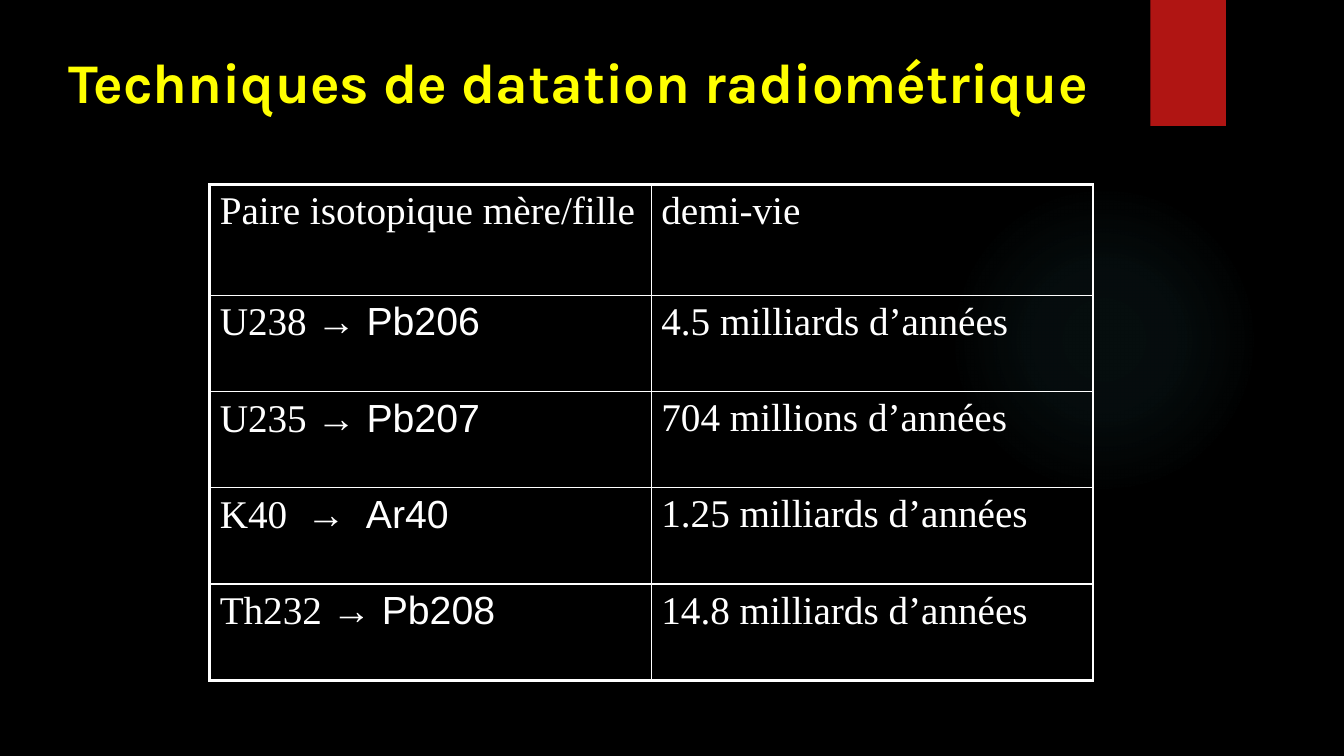
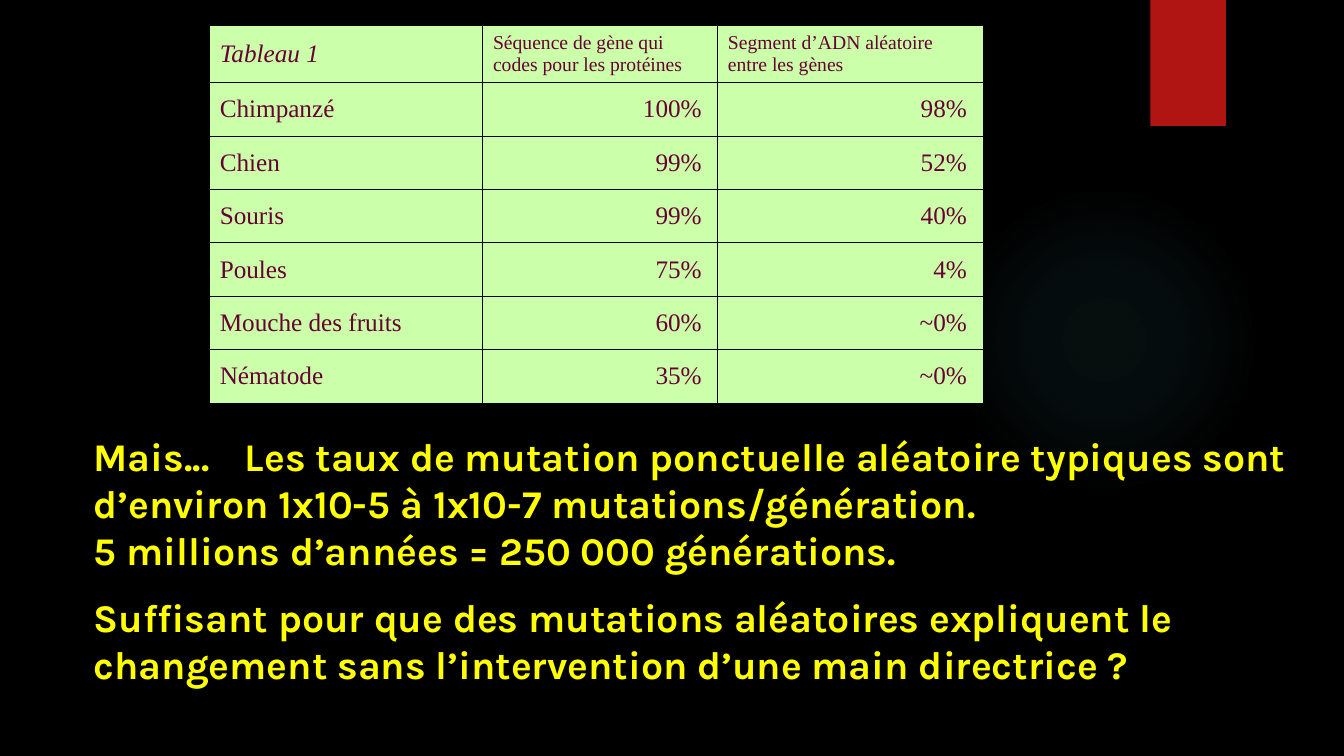
import pptx
import pptx.dml.color
import pptx.enum.shapes
import pptx.enum.text
import pptx.oxml
import pptx.oxml.ns
import pptx.oxml.xmlchemy
import pptx.util

Inches = pptx.util.Inches
Pt = pptx.util.Pt
RGBColor = pptx.dml.color.RGBColor
MSO_SHAPE = pptx.enum.shapes.MSO_SHAPE
MSO_ANCHOR = pptx.enum.text.MSO_ANCHOR
PP_ALIGN = pptx.enum.text.PP_ALIGN
qn = pptx.oxml.ns.qn

BLACK = RGBColor(0x00, 0x00, 0x00)
WHITE = RGBColor(0xFF, 0xFF, 0xFF)
YELLOW = RGBColor(0xFF, 0xFF, 0x00)
RED = RGBColor(0xB0, 0x15, 0x13)
TEAL = RGBColor(0x50, 0xB9, 0xC1)
MINT = RGBColor(0xCC, 0xFF, 0xAA)
PLUM = RGBColor(0x66, 0x00, 0x33)
GLOW_STOPS = [(0, 7), (36, 6), (69, 0)]
HEADING_FONT = "Karla"
TABLE_FONT = "Times New Roman"
DECAY_FONT = "Arial"

DATING_TITLE = "Techniques de datation radiométrique"
DATING_HEADER = ("Paire isotopique mère/fille", "demi-vie")
HALF_LIVES = [
    ("U238 ", "→ Pb206", "4.5 milliards d’années"),
    ("U235 ", "→ Pb207", "704 millions d’années"),
    ("K40\t", "→\tAr40", "1.25 milliards d’années"),
    ("Th232 ", "→ Pb208", "14.8 milliards d’années"),
]
DECAY_TABS = (0.86, 1.45)

GENE_HEADER = (
    "Tableau 1",
    "Séquence de gène qui\vcodes pour les protéines",
    "Segment d’ADN aléatoire\ventre les gènes",
)
GENE_MATCHES = [
    ("Chimpanzé", "100%", "98%"),
    ("Chien", "99%", "52%"),
    ("Souris", "99%", "40%"),
    ("Poules", "75%", "4%"),
    ("Mouche des fruits", "60%", "~0%"),
    ("Nématode", "35%", "~0%"),
]
MUTATION_RATES = [
    "Mais...\tLes taux de mutation ponctuelle aléatoire typiques sont "
    "d’environ 1x10-5 à 1x10-7 mutations/génération.\v"
    "5 millions d’années = 250 000 générations.",
    "Suffisant pour que des mutations aléatoires expliquent le changement "
    "sans l’intervention d’une main directrice ?",
]
RATES_TAB = 1.46


def style(paragraph, font_name, size, color, bold=False, italic=False):
    font = paragraph.font
    font.name, font.size = font_name, Pt(size)
    font.color.rgb = color
    font.bold, font.italic = bold, italic


def add_tabs(paragraph, positions):
    properties = paragraph._p.get_or_add_pPr()
    tabs = pptx.oxml.xmlchemy.OxmlElement("a:tabLst")
    for position in positions:
        tab = pptx.oxml.xmlchemy.OxmlElement("a:tab")
        tab.set("pos", str(Inches(position)))
        tab.set("algn", "l")
        tabs.append(tab)
    properties.append(tabs)


def place(shape, left, top, width, height):
    shape.left, shape.top = Inches(left), Inches(top)
    shape.width, shape.height = Inches(width), Inches(height)
    frame = shape.text_frame
    frame.word_wrap = True
    frame.auto_size = pptx.enum.text.MSO_AUTO_SIZE.NONE
    frame.vertical_anchor = MSO_ANCHOR.TOP
    return frame


def set_borders(cell, widths, color):
    properties = cell._tc.get_or_add_tcPr()
    for order, (side, width) in enumerate(zip("LRTB", widths)):
        properties.insert(order, pptx.oxml.parse_xml(
            f'<a:ln{side} {pptx.oxml.ns.nsdecls("a")} w="{Pt(width)}">'
            f'<a:solidFill><a:srgbClr val="{color}"/></a:solidFill></a:ln{side}>'))


def add_grid(slide, top, widths, heights, border, outer, inner, fill=None):
    table = slide.shapes.add_table(
        len(heights), len(widths), Inches(2.08), Inches(top),
        Inches(sum(widths)), Inches(sum(heights))).table
    table.first_row = table.horz_banding = False
    for column, width in zip(table.columns, widths):
        column.width = Inches(width)
    last_row, last_column = len(heights) - 1, len(widths) - 1
    for r, height in enumerate(heights):
        table.rows[r].height = Inches(height)
        for c in range(len(widths)):
            cell = table.cell(r, c)
            if fill is None:
                cell.fill.background()
            else:
                cell.fill.solid()
                cell.fill.fore_color.rgb = fill
            edges = (c == 0, c == last_column, r == 0, r == last_row)
            set_borders(cell, [outer if edge else inner for edge in edges], border)
    return table


def add_decor(slide, master):
    master.background.fill.solid()
    master.background.fill.fore_color.rgb = BLACK
    glow = slide.shapes.add_shape(
        MSO_SHAPE.OVAL, Inches(9.41), Inches(1.83), Inches(3.08), Inches(3.08))
    ribbon = slide.shapes.add_shape(
        MSO_SHAPE.RECTANGLE, Inches(11.41), 0, Inches(0.75), Inches(1.25))
    ribbon.fill.solid()
    ribbon.fill.fore_color.rgb = RED
    glow.fill.background()
    stops = "".join(
        f'<a:gs pos="{position * 1000}"><a:srgbClr val="{TEAL}">'
        f'<a:alpha val="{alpha * 1000}"/></a:srgbClr></a:gs>'
        for position, alpha in GLOW_STOPS)
    properties = glow.element.spPr
    properties.replace(properties.find(qn("a:noFill")), pptx.oxml.parse_xml(
        f'<a:gradFill {pptx.oxml.ns.nsdecls("a")}><a:gsLst>{stops}</a:gsLst>'
        '<a:path path="circle"><a:fillToRect l="50000" t="50000" r="50000" b="50000"/>'
        '</a:path></a:gradFill>'))
    for order, shape in enumerate((glow, ribbon)):
        shape.line.fill.background()
        shape.shadow.inherit = False
        master.shapes.element.insert(2 + order, shape.element)


def build_dating(slide):
    frame = place(slide.shapes.title, 0.58, 0.42, 11.08, 0.77)
    frame.text = DATING_TITLE
    frame.paragraphs[0].alignment = PP_ALIGN.LEFT
    style(frame.paragraphs[0], HEADING_FONT, 40, YELLOW, bold=True)

    row_height = (4.92 - 1.1) / len(HALF_LIVES)
    table = add_grid(slide, 1.83, [4.38] * 2, [1.1] + [row_height] * len(HALF_LIVES),
                     WHITE, 2.25, 1)
    for c, heading in enumerate(DATING_HEADER):
        table.cell(0, c).text = heading
    for r, (parent, daughter, half_life) in enumerate(HALF_LIVES, 1):
        pair = table.cell(r, 0).text_frame.paragraphs[0]
        if "\t" in parent:
            add_tabs(pair, DECAY_TABS)
        pair.add_run().text = parent
        decay = pair.add_run()
        decay.text = daughter
        decay.font.name = DECAY_FONT
        table.cell(r, 1).text = half_life
    for cell in table.iter_cells():
        style(cell.text_frame.paragraphs[0], TABLE_FONT, 28, WHITE)


def build_genes(slide):
    title = slide.shapes.title.element
    title.getparent().remove(title)
    table = add_grid(slide, 0.25, [2.71, 2.33, 2.63],
                     [0.57] + [0.53] * len(GENE_MATCHES), BLACK, 0.75, 0.75, MINT)
    for r, row in enumerate([GENE_HEADER] + GENE_MATCHES):
        for c, value in enumerate(row):
            cell = table.cell(r, c)
            cell.text = value
            cell.vertical_anchor = MSO_ANCHOR.MIDDLE
            paragraph = cell.text_frame.paragraphs[0]
            if r and c:
                paragraph.alignment = PP_ALIGN.RIGHT
                cell.margin_right = Inches(0.16)
            style(paragraph, TABLE_FONT, 14 if r == 0 and c else 18, PLUM,
                  italic=r == c == 0)

    frame = place(slide.placeholders[1], 0.83, 4.24, 12.08, 2.93)
    for order, text in enumerate(MUTATION_RATES):
        paragraph = frame.add_paragraph() if order else frame.paragraphs[0]
        paragraph.text = text
        paragraph.space_before = Pt(14 * order)
        properties = paragraph._p.get_or_add_pPr()
        properties.set("marL", "0")
        properties.set("indent", "0")
        properties.append(pptx.oxml.xmlchemy.OxmlElement("a:buNone"))
        if "\t" in text:
            add_tabs(paragraph, [RATES_TAB])
        style(paragraph, HEADING_FONT, 28, YELLOW, bold=True)


def main():
    deck = pptx.Presentation()
    deck.slide_width, deck.slide_height = Inches(13.33), Inches(7.5)
    dating = deck.slides.add_slide(deck.slide_layouts[5])
    add_decor(dating, deck.slide_master)
    build_dating(dating)
    build_genes(deck.slides.add_slide(deck.slide_layouts[1]))
    deck.save("out.pptx")


if __name__ == "__main__":
    main()
